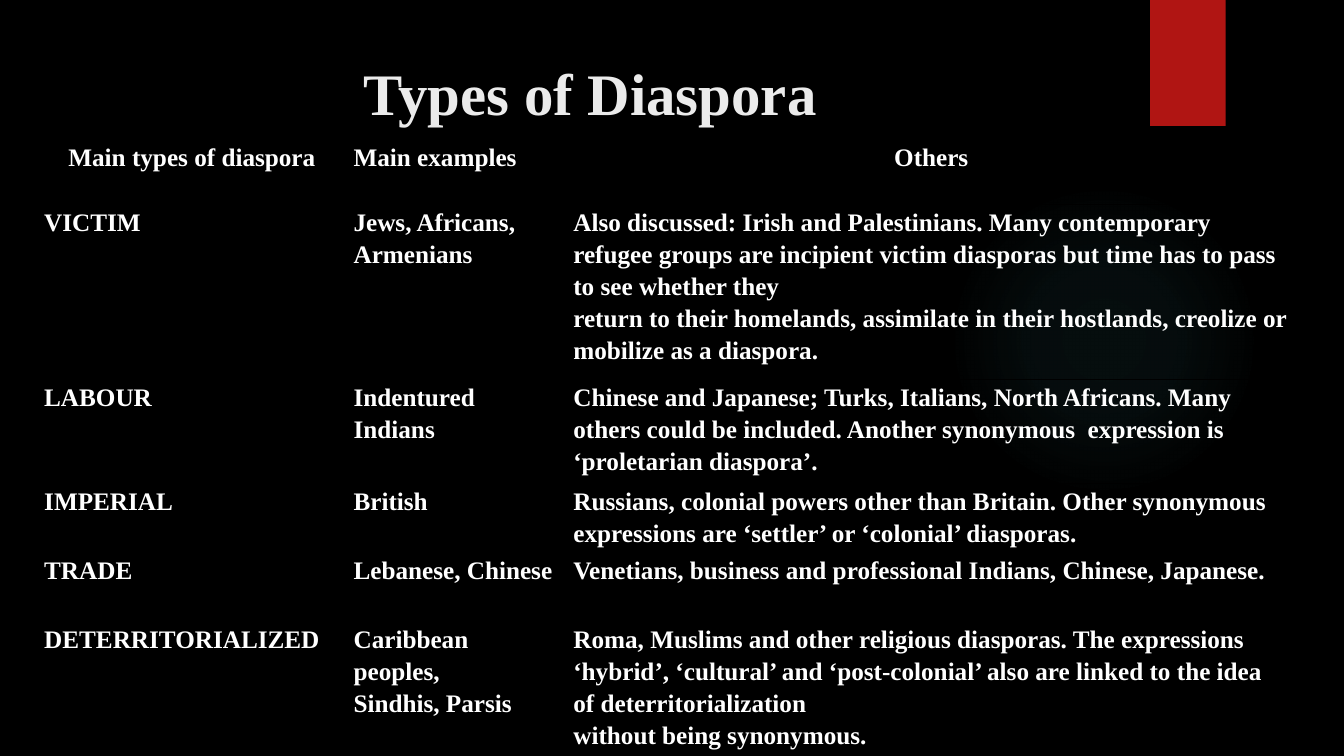
from pptx import Presentation
from pptx.dml.color import RGBColor as Color
from pptx.enum.shapes import MSO_SHAPE as Shape
from pptx.enum.text import MSO_ANCHOR as Anchor, PP_ALIGN as Align
from pptx.oxml import parse_xml
from pptx.oxml.ns import nsdecls
from pptx.util import Pt

COLORS = {"black": "000000", "white": "FFFFFF", "title": "EBEBEB",
          "ribbon": "B01513", "glow": "50B9C1"}
COLUMN_WIDTHS = [221, 157, 521.3]
ROW_HEIGHTS = [46, 125, 74.2, 49, 49, 99.4]
ROWS = [
    [["Main types of diaspora"], ["Main examples"], ["Others"]],
    [["VICTIM"], ["Jews, Africans,", "Armenians"],
     ["Also discussed: Irish and Palestinians. Many contemporary refugee groups are "
      "incipient victim diasporas but time has to pass to see whether they",
      "return to their homelands, assimilate in their hostlands, creolize or "
      "mobilize as a diaspora."]],
    [["LABOUR"], ["Indentured Indians"],
     ["Chinese and Japanese; Turks, Italians, North Africans. Many others could be "
      "included. Another synonymous  expression is ‘proletarian diaspora’."]],
    [["IMPERIAL"], ["British"],
     ["Russians, colonial powers other than Britain. Other synonymous expressions "
      "are ‘settler’ or ‘colonial’ diasporas."]],
    [["TRADE"], ["Lebanese, Chinese"],
     ["Venetians, business and professional Indians, Chinese, Japanese."]],
    [["DETERRITORIALIZED"], ["Caribbean peoples,", "Sindhis, Parsis"],
     ["Roma, Muslims and other religious diasporas. The expressions ‘hybrid’, "
      "‘cultural’ and ‘post-colonial’ also are linked to the idea of "
      "deterritorialization",
      "without being synonymous."]],
]


class SlideBuilder:
    """Draws styled elements on one slide, with lengths in points."""

    font_name = "Times New Roman"

    def __init__(self, slide):
        self.slide = slide

    def background(self, color):
        fill = self.slide.background.fill
        fill.solid()
        fill.fore_color.rgb = Color.from_string(COLORS[color])

    def shape(self, kind, left, top, width, height):
        shape = self.slide.shapes.add_shape(
            kind, Pt(left), Pt(top), Pt(width), Pt(height))
        shape.shadow.inherit = False
        shape.line.fill.background()
        return shape

    def rectangle(self, left, top, width, height, color):
        shape = self.shape(Shape.RECTANGLE, left, top, width, height)
        shape.fill.solid()
        shape.fill.fore_color.rgb = Color.from_string(COLORS[color])

    def glow(self, left, top, size, color, stops):
        shape = self.shape(Shape.OVAL, left, top, size, size)
        stop_xml = "".join(
            f'<a:gs pos="{position * 1000}"><a:srgbClr val="{COLORS[color]}">'
            f'<a:alpha val="{alpha * 1000}"/></a:srgbClr></a:gs>'
            for position, alpha in stops)
        gradient = parse_xml(
            f'<a:gradFill {nsdecls("a")} rotWithShape="1"><a:gsLst>{stop_xml}</a:gsLst>'
            '<a:path path="circle"><a:fillToRect l="50000" t="50000" r="50000" '
            'b="50000"/></a:path></a:gradFill>')
        shape.element.spPr.prstGeom.addnext(gradient)

    def add_text(self, frame, paragraphs, size, color, align, spacing=1.0):
        frame.word_wrap = True
        for index, text in enumerate(paragraphs):
            paragraph = frame.add_paragraph() if index else frame.paragraphs[0]
            paragraph.alignment = align
            paragraph.line_spacing = spacing
            run = paragraph.add_run()
            run.text = text
            run.font.name = self.font_name
            run.font.size = Pt(size)
            run.font.bold = True
            run.font.color.rgb = Color.from_string(COLORS[color])

    def title(self, text, left, top, width, height):
        box = self.slide.shapes.add_textbox(Pt(left), Pt(top), Pt(width), Pt(height))
        box.text_frame.vertical_anchor = Anchor.MIDDLE
        self.add_text(box.text_frame, [text], 42, "title", Align.CENTER)

    def borders(self, cell, color):
        properties = cell._tc.get_or_add_tcPr()
        for side in "LRTB":
            properties.append(parse_xml(
                f'<a:ln{side} {nsdecls("a")} w="{Pt(1)}"><a:solidFill>'
                f'<a:srgbClr val="{COLORS[color]}"/></a:solidFill></a:ln{side}>'))

    def table(self, left, top, widths, heights, rows):
        table = self.slide.shapes.add_table(
            len(rows), len(widths), Pt(left), Pt(top),
            Pt(sum(widths)), Pt(sum(heights))).table
        table.first_row = table.horz_banding = False
        for column, width in zip(table.columns, widths):
            column.width = Pt(width)
        for row_index, (height, row) in enumerate(zip(heights, rows)):
            table.rows[row_index].height = Pt(height)
            for column_index, paragraphs in enumerate(row):
                cell = table.cell(row_index, column_index)
                self.borders(cell, "black")
                cell.fill.background()
                cell.margin_left = cell.margin_right = Pt(5)
                cell.margin_top = cell.margin_bottom = 0
                centered = row_index == 0 and column_index != 1
                align = Align.CENTER if centered else Align.LEFT
                self.add_text(cell.text_frame, paragraphs, 18, "white", align, 1.15)


def main():
    presentation = Presentation()
    presentation.slide_width = Pt(960)
    presentation.slide_height = Pt(540)
    builder = SlideBuilder(presentation.slides.add_slide(presentation.slide_layouts[6]))
    builder.background("black")
    builder.glow(677.5, 131.8, 221.8, "glow", [(0, 7), (36, 6), (69, 0)])
    builder.rectangle(821.5, 0, 54, 90, "ribbon")
    builder.title("Types of Diaspora", 51, 36, 741, 60)
    builder.table(26.6, 100, COLUMN_WIDTHS, ROW_HEIGHTS, ROWS)
    presentation.save("out.pptx")


if __name__ == "__main__":
    main()
